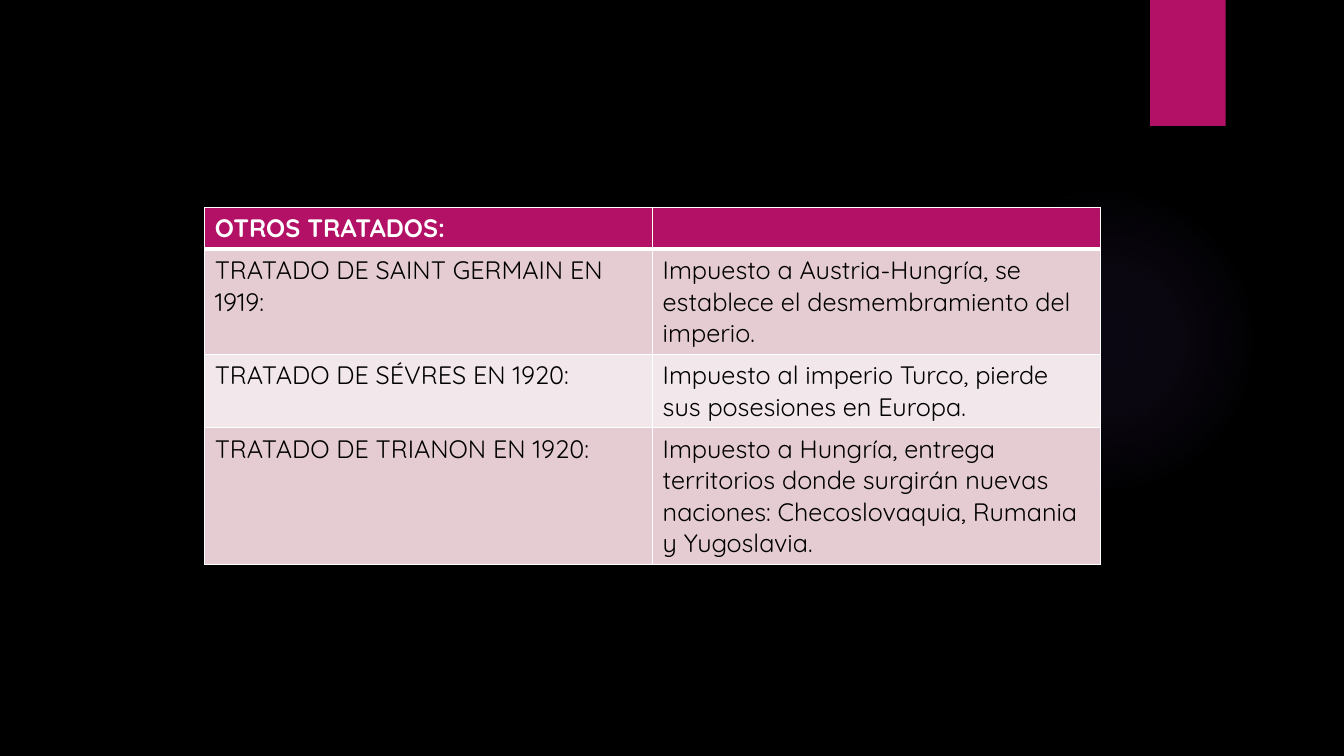
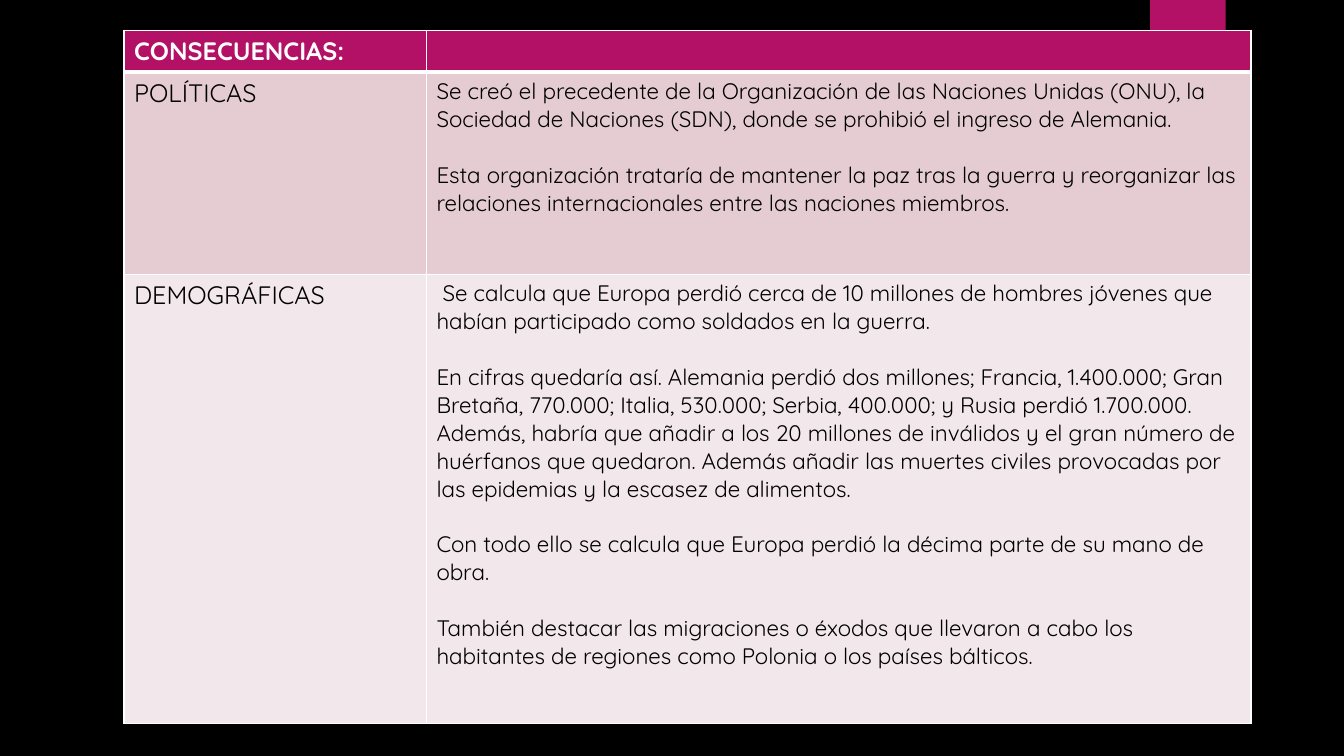
from pptx import Presentation, oxml, util as u
from pptx.dml.color import RGBColor
from pptx.enum import shapes
from pptx.oxml import ns

COLORS = {
    "background": "000000",
    "accent": "B31166",
    "glow": "9B6BF2",
    "band_dark": "E5CCD3",
    "band_light": "F2E7EA",
    "border": "FFFFFF",
    "header_text": "FFFFFF",
    "body_text": "000000",
}
TREATIES = [
    ("OTROS TRATADOS:", ""),
    ("TRATADO DE SAINT GERMAIN EN 1919:",
     "Impuesto a Austria-Hungría, se establece el desmembramiento del imperio."),
    ("TRATADO DE SÉVRES EN 1920:",
     "Impuesto al imperio Turco, pierde sus posesiones en Europa."),
    ("TRATADO DE TRIANON EN 1920:",
     "Impuesto a Hungría, entrega territorios donde surgirán nuevas naciones: "
     "Checoslovaquia, Rumania y Yugoslavia."),
]
POLITICAL = [
    "Se creó el precedente de la Organización de las Naciones Unidas (ONU), la "
    "Sociedad de Naciones (SDN), donde se prohibió el ingreso de Alemania.",
    "Esta organización trataría de mantener la paz tras la guerra y reorganizar las "
    "relaciones internacionales entre las naciones miembros.",
]
DEMOGRAPHIC = [
    " Se calcula que Europa perdió cerca de 10 millones de hombres jóvenes que "
    "habían participado como soldados en la guerra.",
    "En cifras quedaría así. Alemania perdió dos millones; Francia, 1.400.000; Gran "
    "Bretaña, 770.000; Italia, 530.000; Serbia, 400.000; y Rusia perdió 1.700.000.",
    "Además, habría que añadir a los 20 millones de inválidos y el gran número de "
    "huérfanos que quedaron. Además añadir las muertes civiles provocadas por las "
    "epidemias y la escasez de alimentos.",
    "Con todo ello se calcula que Europa perdió la décima parte de su mano de obra.",
    "También destacar las migraciones o éxodos que llevaron a cabo los habitantes de "
    "regiones como Polonia o los países bálticos.",
]
CONSEQUENCES = [
    ("CONSECUENCIAS:", ""),
    ("POLÍTICAS", "\n".join(POLITICAL)),
    ("DEMOGRÁFICAS", "\n".join(DEMOGRAPHIC)),
]


class Deck:
    """Holds the shared style and the slide being built."""

    font = "Quicksand"
    label_size = 18
    paragraph_gap = 20

    def __init__(self):
        self.prs = Presentation()
        self.prs.slide_width, self.prs.slide_height = u.Pt(960), u.Pt(540)
        self.paint(self.prs.slide_master.background.fill, "background")
        self.slide = None

    def paint(self, fill, color):
        fill.solid()
        fill.fore_color.rgb = RGBColor.from_string(COLORS[color])

    def new_slide(self):
        self.slide = self.prs.slides.add_slide(self.prs.slide_layouts[6])
        self.glow(677.5, 131.8, 221.8)
        self.tag(821.5, 0, 54, 90)

    def plain_shape(self, kind, *box):
        shape = self.slide.shapes.add_shape(kind, *map(u.Pt, box))
        shape.shadow.inherit = False
        shape.line.fill.background()
        return shape

    def glow(self, left, top, diameter):
        halo = self.plain_shape(shapes.MSO_SHAPE.OVAL, left, top, diameter, diameter)
        stops = "".join(
            f'<a:gs pos="{position * 1000}"><a:srgbClr val="{COLORS["glow"]}">'
            f'<a:alpha val="{opacity * 1000}"/></a:srgbClr></a:gs>'
            for position, opacity in ((0, 7), (36, 6), (69, 0)))
        gradient = oxml.parse_xml(
            f'<a:gradFill {ns.nsdecls("a")}><a:gsLst>{stops}</a:gsLst>'
            '<a:path path="circle"><a:fillToRect l="50000" t="50000" r="50000" '
            'b="50000"/></a:path></a:gradFill>')
        halo.element.spPr.insert(2, gradient)

    def tag(self, *box):
        ribbon = self.plain_shape(shapes.MSO_SHAPE.RECTANGLE, *box)
        self.paint(ribbon.fill, "accent")

    def borders(self, cell, top, bottom):
        widths = {"lnL": 1, "lnR": 1, "lnT": top, "lnB": bottom}
        for index, (side, width) in enumerate(widths.items()):
            edge = oxml.parse_xml(
                f'<a:{side} {ns.nsdecls("a")} w="{u.Pt(width)}"><a:solidFill>'
                f'<a:srgbClr val="{COLORS["border"]}"/></a:solidFill></a:{side}>')
            cell._tc.get_or_add_tcPr().insert(index, edge)

    def cell_text(self, cell, content, size, header, tight):
        cell.text = content
        color = COLORS["header_text" if header else "body_text"]
        for index, paragraph in enumerate(cell.text_frame.paragraphs):
            if index and index not in tight:
                paragraph.space_before = u.Pt(self.paragraph_gap)
            paragraph.font.name = self.font
            paragraph.font.size = u.Pt(size)
            paragraph.font.bold = header
            paragraph.font.color.rgb = RGBColor.from_string(color)

    def table(self, left, top, widths, heights, rows, detail_size=18, tight=()):
        frame = self.slide.shapes.add_table(
            len(rows), len(widths), u.Pt(left), u.Pt(top),
            u.Pt(sum(widths)), u.Pt(sum(heights)))
        grid = frame.table
        grid.horz_banding = False
        for column, width in zip(grid.columns, widths):
            column.width = u.Pt(width)
        for r, (height, row) in enumerate(zip(heights, rows)):
            grid.rows[r].height = u.Pt(height)
            band = "accent" if r == 0 else ("band_light", "band_dark")[r % 2]
            for c, content in enumerate(row):
                cell = grid.cell(r, c)
                self.paint(cell.fill, band)
                self.borders(cell, 3 if r == 1 else 1, 3 if r == 0 else 1)
                size = detail_size if r and c else self.label_size
                self.cell_text(cell, content, size, r == 0, tight)


def main():
    deck = Deck()
    deck.new_slide()
    deck.table(146.2, 148.3, (320, 320), (29.5, 75, 52.5, 97.5), TREATIES)
    deck.new_slide()
    deck.table(88.6, 21.6, (216, 589), (29.5, 144.5, 321), CONSEQUENCES,
               detail_size=16, tight=(2,))
    deck.prs.save("out.pptx")


if __name__ == "__main__":
    main()
